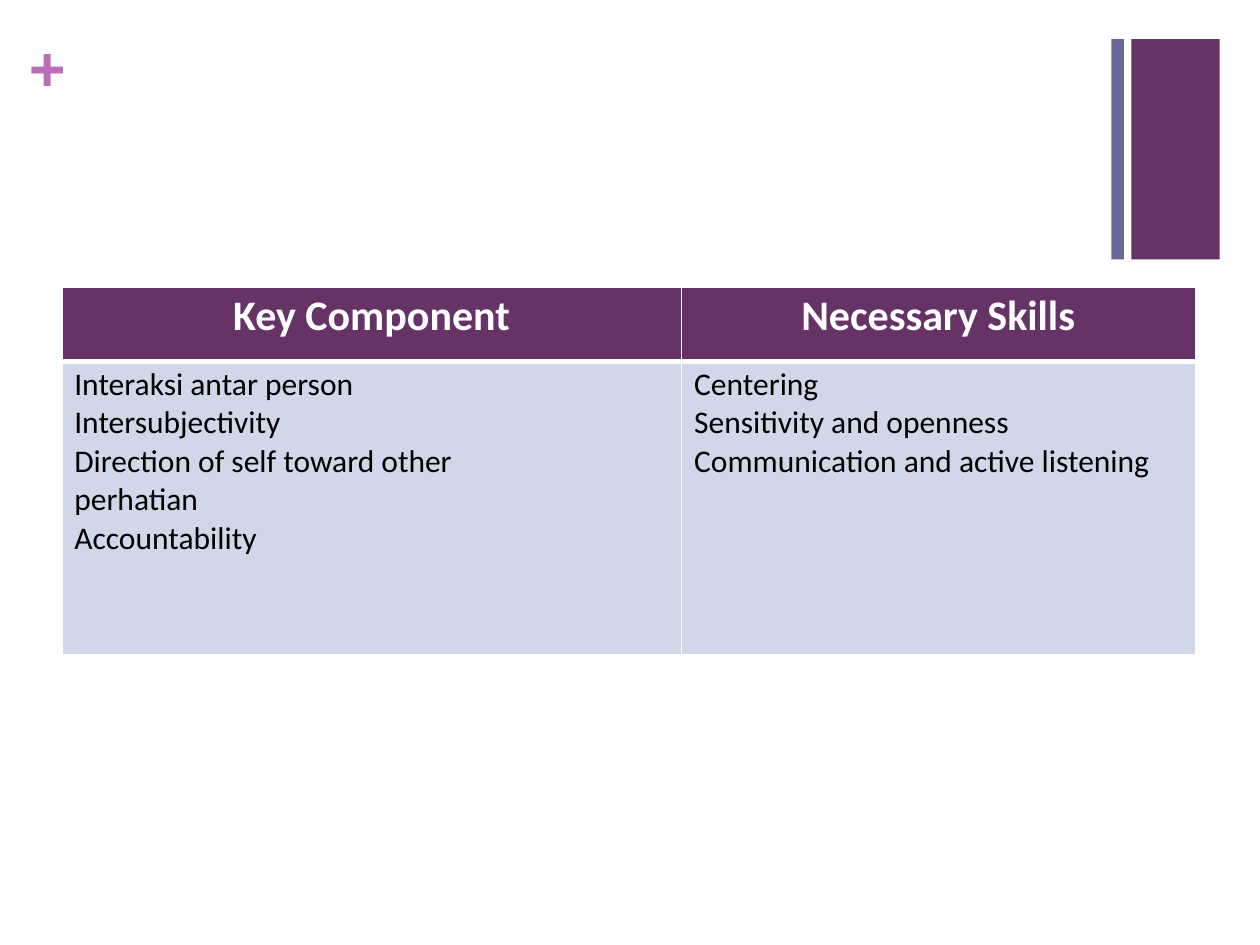
from lxml import etree
from pptx import Presentation
from pptx import util as u
from pptx.dml.color import RGBColor
from pptx.enum import shapes, text
from pptx.oxml.ns import qn

PLUM = RGBColor(0x66, 0x33, 0x66)
SLATE = RGBColor(0x66, 0x66, 0x99)
ORCHID = RGBColor(0xB8, 0x6F, 0xB8)
PALE_BLUE = RGBColor(0xD0, 0xD7, 0xE8)
WHITE = RGBColor(0xFF, 0xFF, 0xFF)
BLACK = RGBColor(0, 0, 0)

HEADERS = ["Key Component", "Necessary Skills"]
BODY = [
    [
        "Interaksi antar person",
        "Intersubjectivity",
        "Direction of self toward other perhatian",
        "Accountability",
    ],
    ["Centering", "Sensitivity and openness", "Communication and active listening"],
]
COLUMN_WIDTHS = [4.92, 4.08]
ROW_HEIGHTS = [0.59, 2.33]
HEADER_INDENTS = [1.36, 0.95]
BODY_INDENT = 0.1
BODY_RIGHT_MARGINS = [1.4, 0]


class SlideBuilder:
    body_font = "Calibri"
    symbol_font = "Arial"

    def __init__(self, slide):
        self.slide = slide

    def format_text(self, text_frame, size, color, font, bold=False, space_before=0):
        text_frame.paragraphs[0].space_before = u.Pt(space_before)
        for paragraph in text_frame.paragraphs:
            paragraph.alignment = text.PP_ALIGN.LEFT
            for run in paragraph.runs:
                run.font.name = font
                run.font.size = u.Pt(size)
                run.font.bold = bold
                run.font.color.rgb = color

    def bar(self, left, top, width, height, color):
        shape = self.slide.shapes.add_shape(
            shapes.MSO_SHAPE.RECTANGLE,
            u.Inches(left), u.Inches(top), u.Inches(width), u.Inches(height),
        )
        shape.shadow.inherit = False
        shape.fill.solid()
        shape.fill.fore_color.rgb = color
        shape.line.fill.background()

    def symbol(self, character, left, top, width, height):
        shape = self.slide.shapes.add_textbox(
            u.Inches(left), u.Inches(top), u.Inches(width), u.Inches(height)
        )
        text_frame = shape.text_frame
        text_frame.word_wrap = True
        text_frame.margin_left = text_frame.margin_right = text_frame.margin_bottom = 0
        text_frame.margin_top = u.Inches(0.01)
        text_frame.text = character
        self.format_text(text_frame, 36, ORCHID, self.symbol_font, True, 1)

    def table(self, left, top, column_widths, row_heights):
        frame = self.slide.shapes.add_table(
            len(row_heights), len(column_widths), u.Inches(left), u.Inches(top),
            u.Inches(sum(column_widths)), u.Inches(sum(row_heights)),
        )
        table = frame.table
        for column, width in zip(table.columns, column_widths):
            column.width = u.Inches(width)
        for row, height in zip(table.rows, row_heights):
            row.height = u.Inches(height)
        return table

    def cell(self, cell, content, fill, indent, right_margin=0):
        cell.margin_left = u.Inches(indent)
        cell.margin_right = u.Inches(right_margin)
        cell.margin_top = u.Inches(0.03)
        cell.margin_bottom = 0
        cell.text_frame.text = content
        self.borders(cell, fill)

    def borders(self, cell, fill):
        """Draw white edges, with a thick rule between header and body."""
        is_header = fill == PLUM
        properties = cell._tc.get_or_add_tcPr()
        widths = {"L": 1, "R": 1, "T": 1 if is_header else 3, "B": 3 if is_header else 1}
        for side, width in widths.items():
            line = etree.SubElement(properties, qn(f"a:ln{side}"), w=str(u.Pt(width)))
            solid = etree.SubElement(line, qn("a:solidFill"))
            etree.SubElement(solid, qn("a:srgbClr"), val=str(WHITE))
        cell.fill.solid()
        cell.fill.fore_color.rgb = fill


def main():
    presentation = Presentation()
    presentation.slide_width = u.Inches(10)
    presentation.slide_height = u.Inches(7.5)
    slide = presentation.slides.add_slide(presentation.slide_layouts[6])
    builder = SlideBuilder(slide)

    builder.bar(8.98, 0.31, 0.7, 1.75, PLUM)
    builder.symbol("+", 0.23, 0.22, 0.32, 0.63)
    builder.bar(8.82, 0.31, 0.1, 1.75, SLATE)

    table = builder.table(0.49, 2.28, COLUMN_WIDTHS, ROW_HEIGHTS)
    for index, (header, lines) in enumerate(zip(HEADERS, BODY)):
        header_cell, body_cell = table.cell(0, index), table.cell(1, index)
        builder.cell(header_cell, header, PLUM, HEADER_INDENTS[index])
        builder.format_text(header_cell.text_frame, 24, WHITE, builder.body_font, True, 2)
        builder.cell(body_cell, "\n".join(lines), PALE_BLUE, BODY_INDENT, BODY_RIGHT_MARGINS[index])
        builder.format_text(body_cell.text_frame, 18, BLACK, builder.body_font, False, 2.5)

    presentation.save("out.pptx")


if __name__ == "__main__":
    main()
